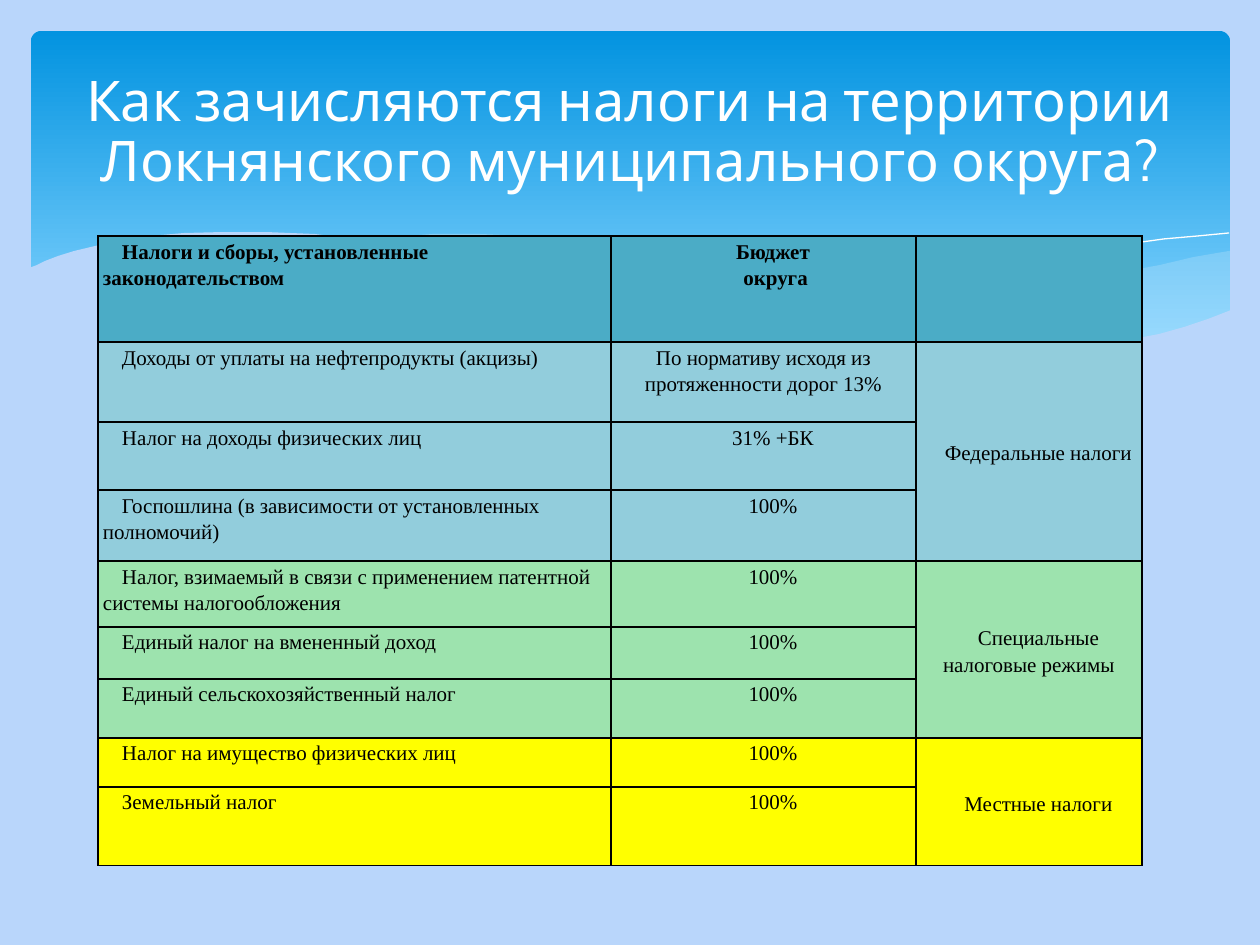
from dataclasses import dataclass

from lxml import etree
from pptx import Presentation
from pptx.dml.color import RGBColor
from pptx.enum.shapes import MSO_SHAPE
from pptx.enum.text import MSO_ANCHOR, PP_ALIGN
from pptx.oxml.ns import qn
from pptx.util import Pt

PX = 914400 / 126
LEFT, CENTER = PP_ALIGN.LEFT, PP_ALIGN.CENTER
TOP, MIDDLE = MSO_ANCHOR.TOP, MSO_ANCHOR.MIDDLE
ROUNDED = MSO_SHAPE.ROUNDED_RECTANGLE


@dataclass(frozen=True)
class Theme:
    background: str = "B9D6FB"
    banner_top: str = "0293E0"
    banner_bottom: str = "83D3FE"
    wave: str = "C6E7FC"
    white: str = "FFFFFF"
    black: str = "000000"
    header: str = "4BACC6"
    federal: str = "92CDDC"
    special: str = "9DE3AE"
    local: str = "FFFF00"
    title_font: str = "Cabin"
    table_font: str = "Times New Roman"
    title_size: int = 32
    table_size: int = 12


THEME = Theme()

# Content
TITLE = "Как зачисляются налоги на территории Локнянского муниципального округа?"
HEADER = ("Налоги и сборы, установленные законодательством", "Бюджет\n округа")
GROUPS = [
    ("Федеральные налоги", THEME.federal, [
        ("Доходы от уплаты на нефтепродукты (акцизы)",
         "По нормативу исходя из протяженности дорог 13%"),
        ("Налог на доходы физических лиц", "31% +БК"),
        ("Госпошлина (в зависимости от установленных полномочий)", "100%")]),
    ("Специальные налоговые режимы", THEME.special, [
        ("Налог, взимаемый в связи с применением патентной системы налогообложения", "100%"),
        ("Единый налог на вмененный доход", "100%"),
        ("Единый сельскохозяйственный налог", "100%")]),
    ("Местные налоги", THEME.local, [
        ("Налог на имущество физических лиц", "100%"),
        ("Земельный налог", "100%")]),
]
TABLE_LEFT, TABLE_TOP = 98, 236
COLUMN_WIDTHS = [513, 305, 226]
ROW_HEIGHTS = [106, 80, 68, 71, 66, 52, 59, 49, 79]
FIRST_LINE = 19

# Banner waves, in px
RIGHT_WAVE = [
    (1229, 251), (1194, 257), (1160, 265), (1123, 272), (1085, 281), (1048, 290),
    (982, 305), (919, 319), (861, 329), (833, 334), (871, 339), (922, 345), (969, 349),
    (1012, 350), (1052, 349), (1087, 347), (1120, 343), (1151, 337), (1178, 331),
    (1213, 318), (1230, 311), (1230, 251)]
MIDDLE_WAVE = [
    (1125, 344), (1091, 339), (1017, 328), (934, 312), (842, 291), (793, 280), (753, 270),
    (717, 262), (682, 255), (648, 249), (616, 244), (586, 241), (529, 236), (479, 234),
    (433, 234), (394, 237), (360, 241), (407, 247), (456, 256), (509, 266), (566, 280),
    (619, 292), (668, 302), (713, 312), (757, 321), (799, 329), (838, 335), (876, 340),
    (911, 345), (942, 348), (974, 349), (1003, 350), (1043, 350), (1080, 349)]
FALLING_LINE = [
    (389, 246), (413, 242), (445, 238), (487, 236), (546, 236), (591, 238), (643, 242),
    (701, 248), (766, 257), (838, 268), (916, 285), (1002, 304), (1047, 316), (1094, 329),
    (1143, 343)]
RISING_LINE = [
    (772, 324), (822, 310), (876, 296), (942, 281), (1016, 265), (1091, 251), (1128, 244),
    (1164, 239), (1198, 236), (1229, 233)]
BOTTOM_WAVE = [
    (1231, 310), (1208, 319), (1184, 327), (1159, 334), (1133, 339), (1103, 344),
    (1071, 347), (1037, 349), (999, 348), (959, 346), (915, 343), (867, 338), (815, 330),
    (760, 320), (699, 309), (634, 294), (563, 277), (493, 261), (427, 248), (368, 241),
    (315, 234), (266, 232), (223, 232), (184, 233), (150, 236), (120, 241), (95, 246),
    (74, 251), (58, 256), (45, 261), (37, 265), (29, 268), (29, 415), (1231, 415)]


def px(value):
    return round(value * PX)


def color(value):
    return RGBColor.from_string(value)


def write_text(frame, text, *, font, size, fill, align=LEFT, bold=False, indent=0, spacing=1.0):
    frame.word_wrap = True
    for index, line in enumerate(text.split("\n")):
        paragraph = frame.add_paragraph() if index else frame.paragraphs[0]
        paragraph.alignment = align
        paragraph.line_spacing = spacing
        properties = paragraph._p.get_or_add_pPr()
        properties.set("marL", "0")
        properties.set("indent", str(px(indent)))
        run = paragraph.add_run()
        run.text = line
        run.font.name, run.font.size, run.font.bold = font, Pt(size), bold
        run.font.color.rgb = color(fill)


def draw_path(shapes, points, *, fill=None, alpha=100, line=None):
    builder = shapes.build_freeform(*points[0], scale=PX)
    builder.add_line_segments(points[1:], close=fill is not None)
    shape = builder.convert_to_shape()
    shape.shadow.inherit = False
    if fill:
        shape.fill.solid()
        shape.fill.fore_color.rgb = color(fill)
        if alpha < 100:
            rgb = shape._element.spPr.find(f"{qn('a:solidFill')}/{qn('a:srgbClr')}")
            etree.SubElement(rgb, qn("a:alpha"), val=str(alpha * 1000))
    else:
        shape.fill.background()
    if line:
        shape.line.color.rgb = color(line)
        shape.line.width = Pt(0)
    else:
        shape.line.fill.background()


def format_cell(cell, fill, text="", *, anchor=TOP, **text_format):
    cell.margin_left = cell.margin_right = px(5)
    cell.margin_top, cell.margin_bottom = px(1), 0
    cell.vertical_anchor = anchor
    properties = cell._tc.get_or_add_tcPr()
    for side in ("lnL", "lnR", "lnT", "lnB"):
        border = etree.SubElement(properties, qn(f"a:{side}"), w=str(Pt(1)))
        solid = etree.SubElement(border, qn("a:solidFill"))
        etree.SubElement(solid, qn("a:srgbClr"), val=THEME.black)
    cell.fill.solid()
    cell.fill.fore_color.rgb = color(fill)
    if text:
        write_text(cell.text_frame, text, font=THEME.table_font, size=THEME.table_size,
                   fill=THEME.black, spacing=1.15, **{"indent": FIRST_LINE, **text_format})


def draw_banner(shapes):
    banner = shapes.add_shape(ROUNDED, px(31), px(31), px(1199), px(340))
    banner.adjustments[0] = 0.03
    banner.shadow.inherit = False
    banner.line.fill.background()
    banner.fill.gradient()
    banner.fill.gradient_angle = 270
    stops = zip(banner.fill.gradient_stops, (0, 0.9), (THEME.banner_top, THEME.banner_bottom))
    for stop, position, value in stops:
        stop.position, stop.color.rgb = position, color(value)
    draw_path(shapes, RIGHT_WAVE, fill=THEME.wave, alpha=29)
    draw_path(shapes, MIDDLE_WAVE, fill=THEME.wave, alpha=40)
    for points in (FALLING_LINE, RISING_LINE):
        draw_path(shapes, points, line=THEME.white)
    draw_path(shapes, BOTTOM_WAVE, fill=THEME.background)


def draw_table(shapes):
    table = shapes.add_table(len(ROW_HEIGHTS), len(COLUMN_WIDTHS), px(TABLE_LEFT), px(TABLE_TOP),
                             px(sum(COLUMN_WIDTHS)), px(sum(ROW_HEIGHTS))).table
    table.first_row = table.horz_banding = False
    for column, width in zip(table.columns, COLUMN_WIDTHS):
        column.width = px(width)
    for row, height in zip(table.rows, ROW_HEIGHTS):
        row.height = px(height)

    format_cell(table.cell(0, 0), THEME.header, HEADER[0], bold=True)
    format_cell(table.cell(0, 1), THEME.header, HEADER[1], bold=True, align=CENTER)
    format_cell(table.cell(0, 2), THEME.header)
    first = 1
    for group, fill, taxes in GROUPS:
        for row, (tax, share) in enumerate(taxes, first):
            format_cell(table.cell(row, 0), fill, tax)
            format_cell(table.cell(row, 1), fill, share, align=CENTER,
                        indent=0 if row == 1 else FIRST_LINE)
            format_cell(table.cell(row, 2), fill, group if row == first else "",
                        anchor=MIDDLE, align=CENTER)
        table.cell(first, 2).merge(table.cell(first + len(taxes) - 1, 2))
        first += len(taxes)


def main():
    presentation = Presentation()
    presentation.slide_width, presentation.slide_height = px(1260), px(945)
    slide = presentation.slides.add_slide(presentation.slide_layouts[6])
    slide.background.fill.solid()
    slide.background.fill.fore_color.rgb = color(THEME.background)
    draw_banner(slide.shapes)
    title = slide.shapes.add_textbox(px(63), px(47), px(1134), px(173)).text_frame
    title.vertical_anchor = MIDDLE
    write_text(title, TITLE, font=THEME.title_font, size=THEME.title_size,
               fill=THEME.white, align=CENTER, spacing=0.9)
    draw_table(slide.shapes)
    presentation.save("out.pptx")


if __name__ == "__main__":
    main()
